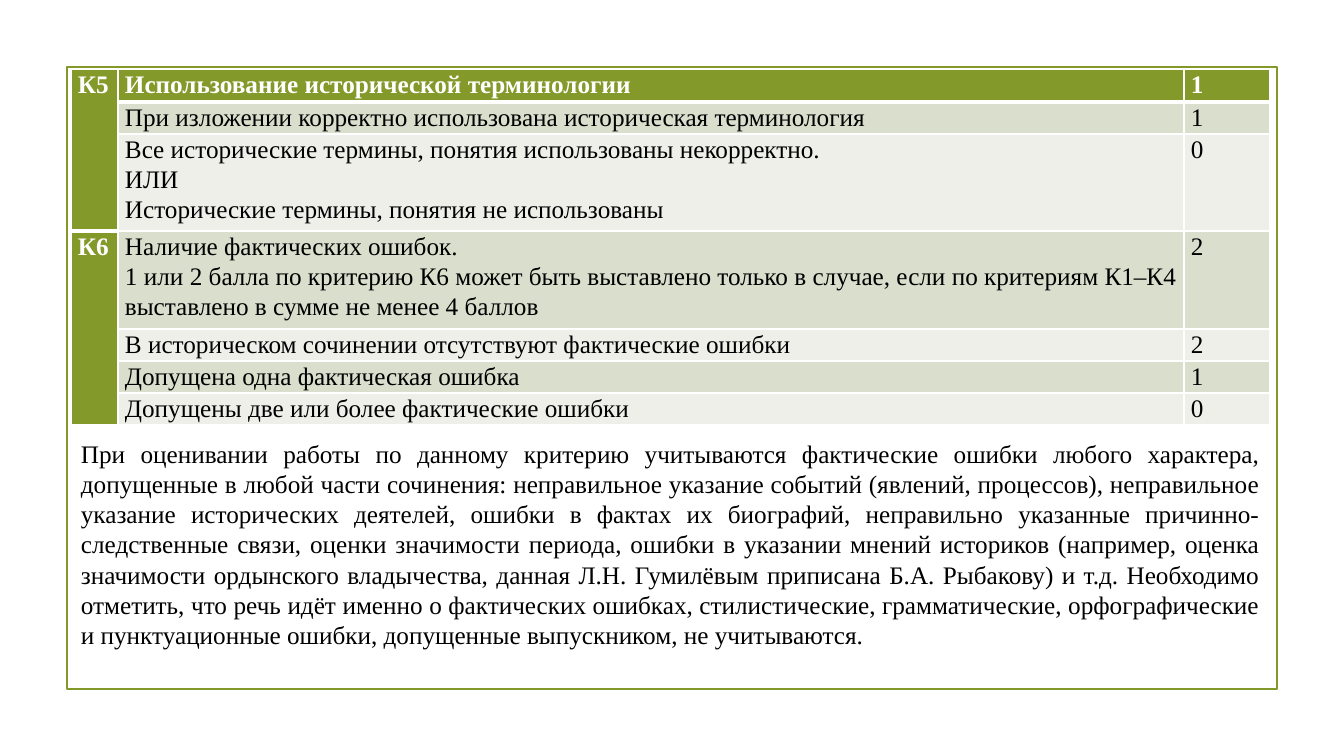
from dataclasses import dataclass

from lxml import etree
from pptx import Presentation
from pptx.dml.color import RGBColor as RGB
from pptx.enum.shapes import MSO_SHAPE as SHAPE
from pptx.enum.text import MSO_AUTO_SIZE as FIT, PP_ALIGN as ALIGN
from pptx.oxml.ns import qn
from pptx.util import Emu, Pt


@dataclass(frozen=True)
class Theme:
    accent: str = "83992A"
    band_dark: str = "D9DECD"
    band_light: str = "EDEFE8"
    white: str = "FFFFFF"
    black: str = "000000"
    font: str = "Times New Roman"
    size: int = 18
    frame_line: float = 1.25
    grid_line: int = 1
    header_line: int = 3
    cell_spacing: float = 1.07


def px(n):
    return Emu(round(n * 914400 / 100.8))


class SlideBuilder:
    def __init__(self, slide, theme):
        self.s, self.theme = slide, theme

    def add_paragraphs(self, tf, paragraphs, color, bold=False, spacing=None):
        for i, text in enumerate(paragraphs):
            p = tf.add_paragraph() if i else tf.paragraphs[0]
            p.alignment = ALIGN.JUSTIFY
            if spacing:
                p.line_spacing = spacing
            r = p.add_run()
            r.text = text
            r.font.name, r.font.size = self.theme.font, Pt(self.theme.size)
            r.font.bold = bold
            r.font.color.rgb = RGB.from_string(color)

    def frame(self, x, y, w, h):
        sp = self.s.shapes.add_shape(SHAPE.RECTANGLE, px(x), px(y), px(w), px(h))
        sp.shadow.inherit = False
        sp.fill.background()
        sp.line.color.rgb = RGB.from_string(self.theme.accent)
        sp.line.width = Pt(self.theme.frame_line)

    def text(self, x, y, w, h, paragraphs):
        tf = self.s.shapes.add_textbox(px(x), px(y), px(w), px(h)).text_frame
        tf.word_wrap = True
        tf.auto_size = FIT.SHAPE_TO_FIT_TEXT
        self.add_paragraphs(tf, paragraphs, self.theme.black)

    def borders(self, cell, bottom):
        tc_pr = cell._tc.get_or_add_tcPr()
        for i, side in enumerate("LRTB"):
            width = bottom if side == "B" else self.theme.grid_line
            ln = etree.Element(qn(f"a:ln{side}"), w=str(Pt(width)))
            fill = etree.SubElement(ln, qn("a:solidFill"))
            etree.SubElement(fill, qn("a:srgbClr"), val=self.theme.white)
            tc_pr.insert(i, ln)

    def cell(self, cell, paragraphs, fill, color, bold, bottom):
        cell.margin_left = cell.margin_right = px(7)
        cell.margin_top = cell.margin_bottom = 0
        cell.fill.solid()
        cell.fill.fore_color.rgb = RGB.from_string(fill)
        self.borders(cell, bottom)
        self.add_paragraphs(cell.text_frame, paragraphs, color, bold,
                            self.theme.cell_spacing)

    def criteria_table(self, x, y, widths, heights, groups):
        t = self.theme
        table = self.s.shapes.add_table(
            len(heights), len(widths), px(x), px(y),
            px(sum(widths)), px(sum(heights))).table
        table.first_row = table.horz_banding = False
        for col, w in zip(table.columns, widths):
            col.width = px(w)
        for row, h in zip(table.rows, heights):
            row.height = px(h)
        n = 0
        for code, rows in groups:
            first, last = n, n + len(rows) - 1
            for lines, score in rows:
                header = n == 0
                band = t.band_dark if n % 2 else t.band_light
                fill = t.accent if header else band
                color = t.white if header else t.black
                bottom = t.header_line if header else t.grid_line
                self.cell(table.cell(n, 1), lines, fill, color, header, bottom)
                self.cell(table.cell(n, 2), [score], fill, color, header, bottom)
                # Code column: text only in the first cell of the group
                code_bottom = t.header_line if first == 0 else t.grid_line
                self.cell(table.cell(n, 0), [code] if n == first else [],
                          t.accent, t.white, True, code_bottom)
                n += 1
            table.cell(first, 0).merge(table.cell(last, 0))


CRITERIA = [
    ("К5", [
        (["Использование исторической терминологии"], "1"),
        (["При изложении корректно использована историческая терминология"], "1"),
        (["Все исторические термины, понятия использованы некорректно.",
          "ИЛИ",
          "Исторические термины, понятия не использованы"], "0"),
    ]),
    ("К6", [
        (["Наличие фактических ошибок.",
          "1 или 2 балла по критерию К6 может быть выставлено только в случае, "
          "если по критериям К1–К4 выставлено в сумме не менее 4 баллов"], "2"),
        (["В историческом сочинении отсутствуют фактические ошибки"], "2"),
        (["Допущена одна фактическая ошибка"], "1"),
        (["Допущены две или более фактические ошибки"], "0"),
    ]),
]

NOTE = (
    "При оценивании работы по данному критерию учитываются фактические ошибки "
    "любого характера, допущенные в любой части сочинения: неправильное указание "
    "событий (явлений, процессов), неправильное указание исторических деятелей, "
    "ошибки в фактах их биографий, неправильно указанные причинно-следственные "
    "связи, оценки значимости периода, ошибки в указании мнений историков "
    "(например, оценка значимости ордынского владычества, данная Л.Н. Гумилёвым "
    "приписана Б.А. Рыбакову) и т.д. Необходимо отметить, что речь идёт именно о "
    "фактических ошибках, стилистические, грамматические, орфографические и "
    "пунктуационные ошибки, допущенные выпускником, не учитываются."
)


def main():
    prs = Presentation()
    prs.slide_width, prs.slide_height = px(1344), px(756)
    page = SlideBuilder(prs.slides.add_slide(prs.slide_layouts[6]), Theme())

    # Border around the page
    page.frame(67, 67, 1210, 622)

    # Scoring criteria
    single, triple = 32, 97
    heights = [single + 1, single, triple, triple + 1, single, single, single]
    page.criteria_table(71, 69, [47, 1066, 86], heights, CRITERIA)

    # Explanation below the table
    page.text(71, 433, 1199, 224, [NOTE])

    prs.save("out.pptx")


if __name__ == "__main__":
    main()
